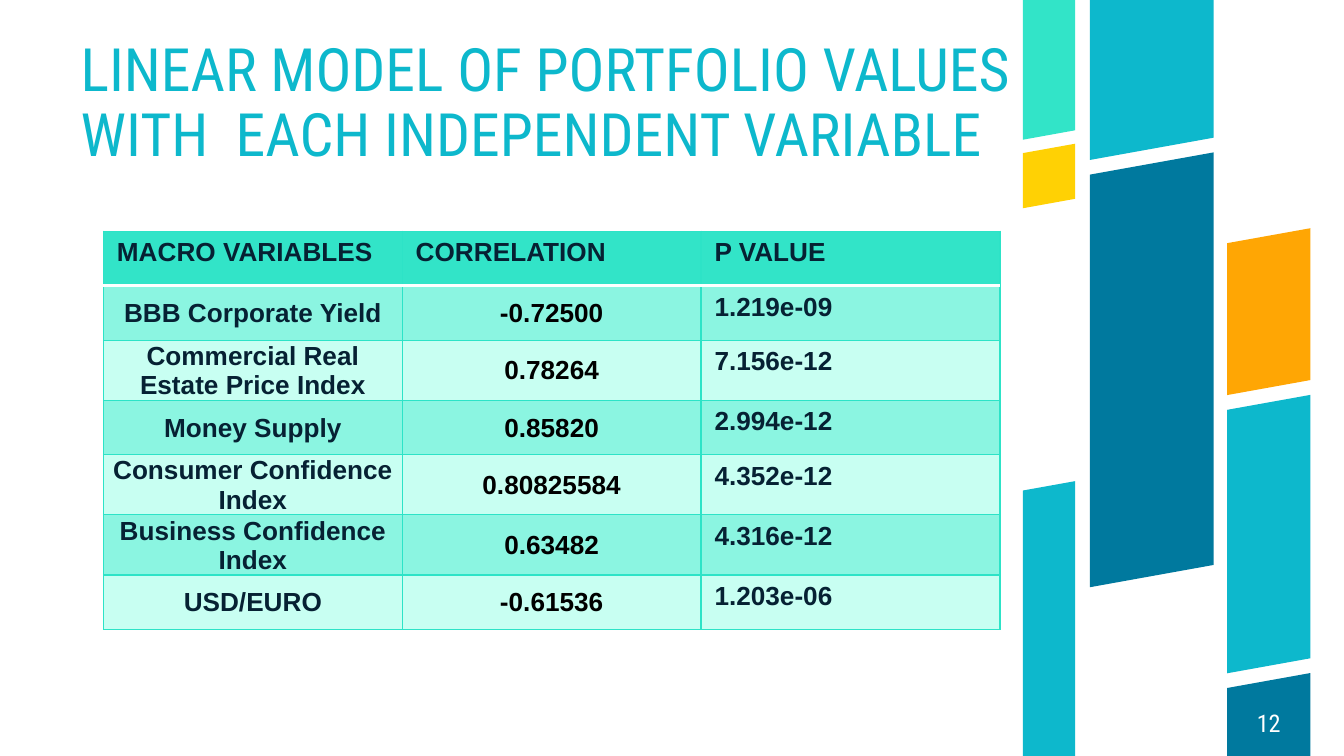
from lxml import etree
from pptx import Presentation
from pptx.dml.color import RGBColor
from pptx.enum.text import MSO_ANCHOR, MSO_AUTO_SIZE, PP_ALIGN
from pptx.oxml.ns import qn
from pptx.util import Inches, Pt

LEFT, CENTER = PP_ALIGN.LEFT, PP_ALIGN.CENTER
TOP, MIDDLE, BOTTOM = MSO_ANCHOR.TOP, MSO_ANCHOR.MIDDLE, MSO_ANCHOR.BOTTOM
NO_AUTOFIT = MSO_AUTO_SIZE.NONE

WIDTH = 10
HEIGHT = WIDTH * 9 / 16
HEADING_FONT, TABLE_FONT = "Roboto Condensed", "Arial"
COLORS = {
    "cyan": "0DB8CC", "yellow": "FFD104", "mint": "32E4C8",
    "blue": "00799E", "orange": "FFA604", "white": "FFFFFF",
    "ink": "062133", "black": "000000", "rule": "2DE3C7",
    "band": "8BF5E1", "pale": "C8FFF2",
}

TITLE = "LINEAR MODEL OF PORTFOLIO VALUES WITH  EACH INDEPENDENT VARIABLE"
PAGE_NUMBER = "12"
ROWS = [
    ("MACRO VARIABLES", "CORRELATION", "P VALUE"),
    ("BBB Corporate Yield", "-0.72500", "1.219e-09"),
    ("Commercial Real Estate Price Index", "0.78264", "7.156e-12"),
    ("Money Supply", "0.85820", "2.994e-12"),
    ("Consumer Confidence Index", "0.80825584", "4.352e-12"),
    ("Business Confidence Index", "0.63482", "4.316e-12"),
    ("USD/EURO", "-0.61536", "1.203e-06"),
]
TABLE_LEFT, TABLE_TOP = 0.77, 1.72
TABLE_WIDTH, TABLE_HEIGHT = 6.67, 2.84

SLOPE = 0.18
STRIPS = [
    {"left": 7.61, "width": 0.39, "bars": [
        ("mint", 0, 1.04), ("yellow", 1.14, 1.55), ("cyan", 3.65, HEIGHT)]},
    {"left": 8.11, "width": 0.92, "bars": [
        ("cyan", 0, 1.19), ("blue", 1.3, 4.37)]},
    {"left": 9.13, "width": 0.62, "bars": [
        ("orange", 1.81, 2.94), ("cyan", 3.05, 5.01), ("blue", 5.12, HEIGHT)]},
]


def color(name):
    return RGBColor.from_string(COLORS[name])


def write(frame, text, font, size, tone, align, bold=False):
    para = frame.paragraphs[0]
    para.alignment = align
    span = para.add_run()
    span.text = text
    span.font.name = font
    span.font.size = Pt(size)
    span.font.bold = bold
    span.font.color.rgb = color(tone)
    return para


def clear_margins(frame):
    frame.margin_left = frame.margin_right = 0
    frame.margin_top = frame.margin_bottom = 0
    frame.word_wrap = True
    frame.auto_size = NO_AUTOFIT


def add_bar(page, left, width, tone, top, bottom):
    def right_edge(y):
        return y if y in (0, HEIGHT) else y - SLOPE * width

    right = left + width
    corners = [(left, top), (right, right_edge(top)),
               (right, right_edge(bottom)), (left, bottom)]
    points = [(Inches(x), Inches(y)) for x, y in corners]
    builder = page.shapes.build_freeform(*points[0], scale=1.0)
    builder.add_line_segments(points[1:], close=True)
    bar = builder.convert_to_shape()
    bar.shadow.inherit = False
    bar.fill.solid()
    bar.fill.fore_color.rgb = color(tone)
    bar.line.fill.background()


def set_border(cell, side, tone, points):
    line = etree.SubElement(cell._tc.get_or_add_tcPr(), qn("a:ln" + side),
                            w=str(Pt(points)))
    fill = etree.SubElement(line, qn("a:solidFill"))
    etree.SubElement(fill, qn("a:srgbClr"), val=COLORS[tone])


def style_cell(cell, row, column, text):
    header = row == 0
    centered = not header and column < 2
    for side in "LRTB":
        divider = (header and side == "B") or (row == 1 and side == "T")
        set_border(cell, side, *(("white", 2) if divider else ("rule", 0.75)))
    cell.fill.solid()
    cell.fill.fore_color.rgb = color(
        "mint" if header else "band" if row % 2 else "pale")
    if centered:
        cell.margin_left = cell.margin_right = cell.margin_top = Inches(0.01)
        cell.margin_bottom = 0
    cell.vertical_anchor = MIDDLE if centered else TOP
    tone = "black" if centered and column == 1 else "ink"
    write(cell.text_frame, text, TABLE_FONT, 14, tone,
          CENTER if centered else LEFT, bold=True)


def add_results_table(page):
    columns = len(ROWS[0])
    table = page.shapes.add_table(
        len(ROWS), columns, Inches(TABLE_LEFT), Inches(TABLE_TOP),
        Inches(TABLE_WIDTH), Inches(TABLE_HEIGHT)).table
    for column in table.columns:
        column.width = Inches(TABLE_WIDTH / columns)
    for row, texts in enumerate(ROWS):
        table.rows[row].height = Inches(TABLE_HEIGHT / len(ROWS))
        for column, text in enumerate(texts):
            style_cell(table.cell(row, column), row, column, text)


def main():
    deck = Presentation()
    deck.slide_width, deck.slide_height = Inches(WIDTH), Inches(HEIGHT)
    page = deck.slides.add_slide(deck.slide_layouts[5])

    for strip in STRIPS:
        for bar in strip["bars"]:
            add_bar(page, strip["left"], strip["width"], *bar)

    title = page.shapes.title
    title.left, title.top = Inches(0.6), Inches(0.83)
    title.width, title.height = Inches(7.13), Inches(0.43)
    clear_margins(title.text_frame)
    title.text_frame.vertical_anchor = BOTTOM
    para = write(title.text_frame, TITLE, HEADING_FONT, 32, "cyan", LEFT)
    para.line_spacing = 0.9

    last = STRIPS[-1]
    number = page.shapes.add_textbox(
        Inches(last["left"]), Inches(HEIGHT - 0.5),
        Inches(last["width"]), Inches(0.5))
    clear_margins(number.text_frame)
    number.text_frame.vertical_anchor = MIDDLE
    write(number.text_frame, PAGE_NUMBER, HEADING_FONT, 13, "white", CENTER)

    add_results_table(page)
    deck.save("out.pptx")


if __name__ == "__main__":
    main()
